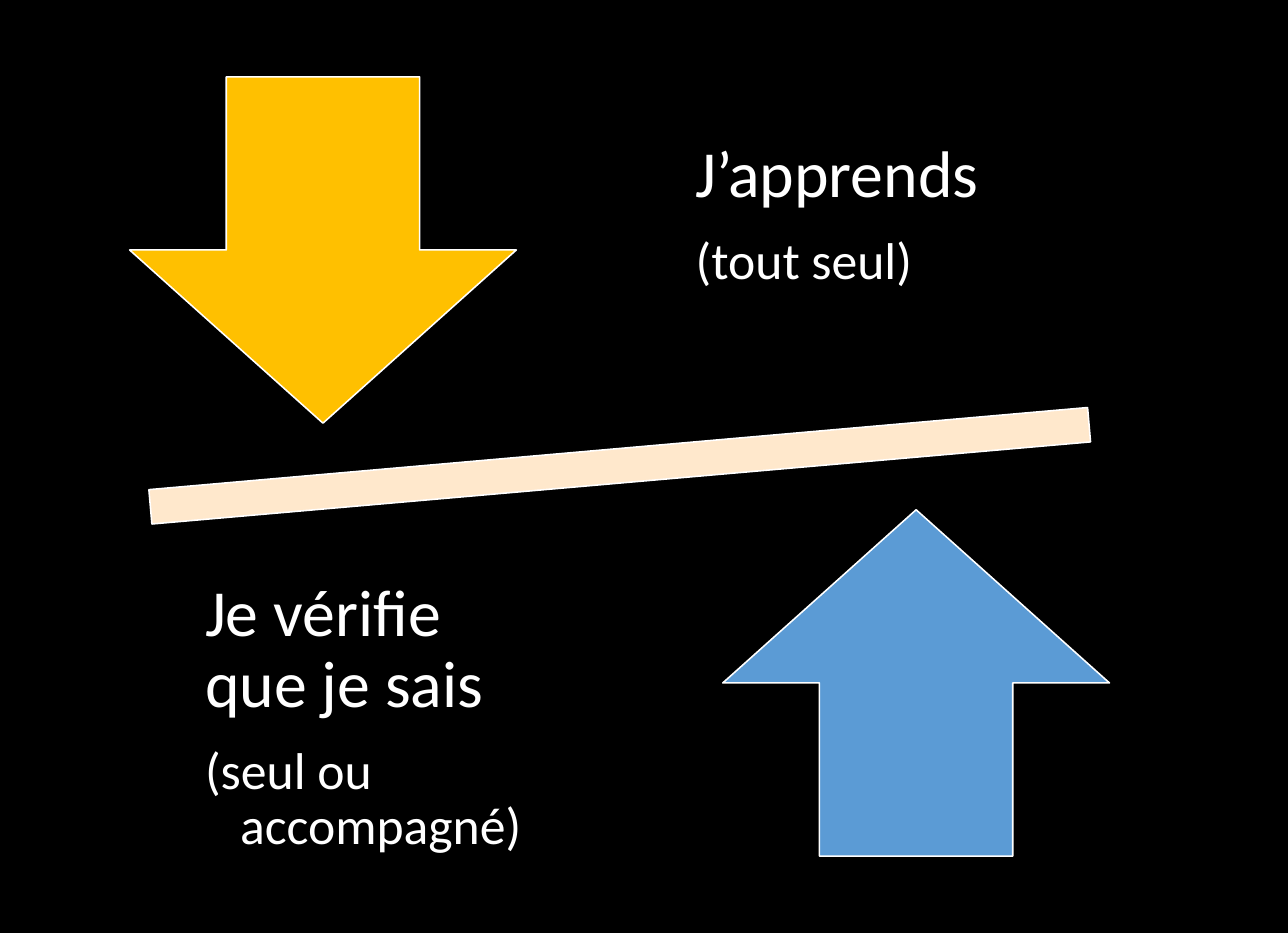
from pptx import Presentation
from pptx.dml.color import RGBColor
from pptx.enum.shapes import MSO_SHAPE as Preset
from pptx.enum.text import MSO_ANCHOR as Anchor, PP_ALIGN as Align
from pptx.util import Cm, Pt

BLACK = RGBColor(0x00, 0x00, 0x00)
WHITE = RGBColor(0xFF, 0xFF, 0xFF)
CREAM = RGBColor(0xFF, 0xE8, 0xCC)
GOLD = RGBColor(0xFF, 0xC0, 0x00)
BLUE = RGBColor(0x5B, 0x9B, 0xD5)

FONT = "Calibri"
ARROW_SIZE = (8.71, 7.8)
LABEL_SIZE = (9.3, 8.18)
LABEL_INSET = 0.84
DETAIL_INDENT = 0.79


def add_figure(slide, preset, box, color, rotation=0):
    shape = slide.shapes.add_shape(preset, *map(Cm, box))
    shape.rotation = rotation
    shape.shadow.inherit = False
    shape.fill.solid()
    shape.fill.fore_color.rgb = color
    shape.line.color.rgb = WHITE
    shape.line.width = Pt(1)


def write_paragraph(paragraph, text, size, space_after, indent=0):
    paragraph.alignment = Align.LEFT
    paragraph.line_spacing = 0.9
    paragraph.space_after = Pt(space_after)
    if indent:
        paragraph.level = 1
        properties = paragraph._p.get_or_add_pPr()
        properties.set("marL", str(Cm(indent)))
        properties.set("indent", str(-Cm(indent)))
    run = paragraph.add_run()
    run.text = text
    run.font.name = FONT
    run.font.size = Pt(size)
    run.font.color.rgb = WHITE


def add_label(slide, box, heading, detail):
    frame = slide.shapes.add_textbox(*map(Cm, box)).text_frame
    frame.word_wrap = True
    frame.vertical_anchor = Anchor.MIDDLE
    frame.margin_left = frame.margin_right = Cm(LABEL_INSET)
    frame.margin_top = frame.margin_bottom = Cm(LABEL_INSET)
    write_paragraph(frame.paragraphs[0], heading, size=42, space_after=14.7)
    write_paragraph(frame.add_paragraph(), detail, size=33, space_after=5,
                    indent=DETAIL_INDENT)


def add_balance(slide, box):
    left, top, width, height = box
    add_figure(slide, Preset.MATH_MINUS,
               (left - 0.48, top + 8.84, width - 0.13, 3.3), CREAM, rotation=-5)
    add_figure(slide, Preset.DOWN_ARROW, (left + 2.92, top + 1.73, *ARROW_SIZE), GOLD)
    add_label(slide, (left + 14.83, top + 0.76, *LABEL_SIZE),
              "J’apprends", "(tout seul)")
    add_figure(slide, Preset.UP_ARROW, (left + 16.28, top + 11.48, *ARROW_SIZE), BLUE)
    add_label(slide, (left + 3.78, top + 12.07, *LABEL_SIZE),
              "Je vérifie que je sais", "(seul ou accompagné)")


def main():
    width, height = 29.01, 21.01
    presentation = Presentation()
    presentation.slide_width = Cm(width)
    presentation.slide_height = Cm(height)
    slide = presentation.slides.add_slide(presentation.slide_layouts[6])
    slide.background.fill.solid()
    slide.background.fill.fore_color.rgb = BLACK
    add_balance(slide, (0, 0, width, height))
    presentation.save("out.pptx")


if __name__ == "__main__":
    main()
